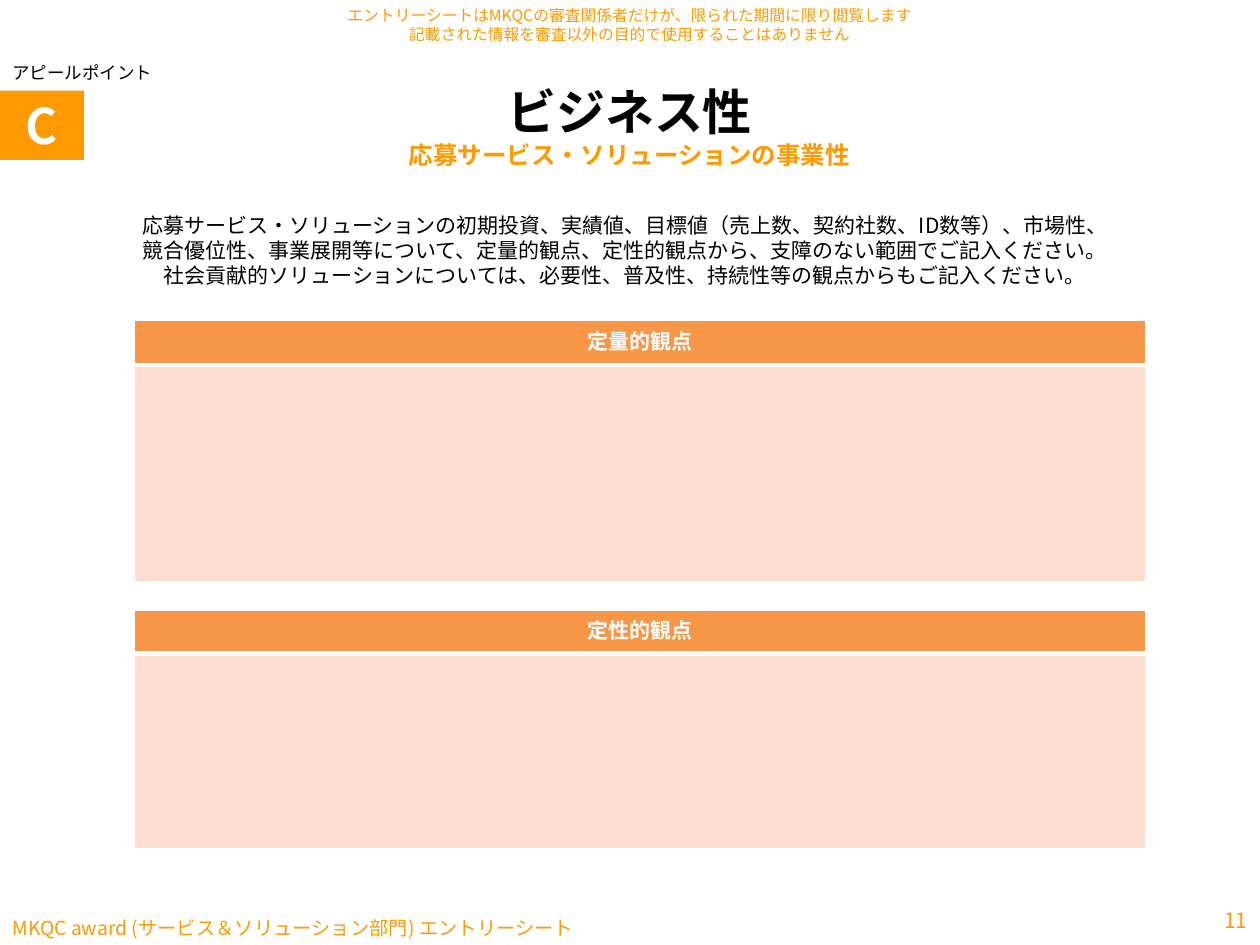
"""Build the business-value page of an award entry sheet."""
from lxml.etree import SubElement
from pptx import Presentation
from pptx.dml.color import RGBColor as RGB
from pptx.enum.shapes import MSO_SHAPE as SHAPE
from pptx.enum.text import MSO_ANCHOR as ANCHOR, MSO_AUTO_SIZE as FIT, PP_ALIGN as ALIGN
from pptx.oxml.ns import qn
from pptx.util import Pt

THEME = {
    "font": "Noto Sans CJK JP",
    "leading": 1.2,
    "color": {"accent": "FF9900", "text": "000000", "white": "FFFFFF",
              "header": "F79646", "body": "FCDDCF"},
    "size": {"hero": 28, "subtitle": 14, "body": 12, "footer": 11, "label": 10, "notice": 9},
}

TITLE = [("ビジネス性", "hero", "text", True),
         ("応募サービス・ソリューションの事業性", "subtitle", "accent", True)]
TITLE_BOX = (19.5, 43.2, 680.5, 57)
BADGE = [("C", "hero", "white", True)]
BADGE_BOX = (0, 51.8, 48, 39.6)

TEXTS = [
    {"box": (0, 520.5, 400, 19.5), "align": ALIGN.LEFT, "anchor": ANCHOR.MIDDLE, "wrap": True,
     "lines": [("MKQC award (サービス＆ソリューション部門) エントリーシート", "footer", "accent", False)]},
    {"box": (274.3, 0, 170.6, 28), "align": ALIGN.CENTER, "anchor": ANCHOR.TOP, "wrap": False,
     "lines": [("エントリーシートはMKQCの審査関係者だけが、限られた期間に限り閲覧します",
                "notice", "accent", False),
               ("記載された情報を審査以外の目的で使用することはありません", "notice", "accent", False)]},
    {"box": (0, 31.7, 110, 19), "align": ALIGN.LEFT, "anchor": ANCHOR.TOP, "wrap": True,
     "lines": [("アピールポイント", "label", "text", False)]},
    {"box": (690.5, 511.2, 29.5, 28.8), "align": ALIGN.RIGHT, "anchor": ANCHOR.MIDDLE, "wrap": True,
     "lines": [("11", "body", "accent", False)]},
    {"box": (70.6, 119.5, 573, 46.8), "align": ALIGN.CENTER, "anchor": ANCHOR.MIDDLE, "wrap": True,
     "lines": [("応募サービス・ソリューションの初期投資、実績値、目標値（売上数、契約社数、ID数等）、市場性、"
                "競合優位性、事業展開等について、定量的観点、定性的観点から、支障のない範囲でご記入ください。",
                "body", "text", False),
               ("社会貢献的ソリューションについては、必要性、普及性、持続性等の観点からもご記入ください。",
                "body", "text", False)]},
]

TABLE_LEFT, TABLE_WIDTH = 76.5, 578
TABLES = [("定量的観点", 183, (25.5, 124)), ("定性的観点", 349, (24.5, 111.5))]


def color(name):
    return RGB.from_string(THEME["color"][name])


def assign(obj, values):
    for name, value in values.items():
        setattr(obj, name, value)


def write(tf, lines, align):
    for i, (text, size, tint, bold) in enumerate(lines):
        p = tf.paragraphs[0] if i == 0 else tf.add_paragraph()
        points = THEME["size"][size]
        assign(p, {"alignment": align, "line_spacing": Pt(points * THEME["leading"]),
                   "space_before": Pt(0), "space_after": Pt(0)})
        r = p.add_run()
        r.text = text
        r.font.color.rgb = color(tint)
        assign(r.font, {"size": Pt(points), "bold": bold, "name": THEME["font"]})
        SubElement(r.font._element, qn("a:ea"), typeface=THEME["font"])


def fill_frame(tf, lines, align=ALIGN.CENTER, anchor=ANCHOR.MIDDLE, wrap=True):
    assign(tf, {"auto_size": FIT.NONE, "word_wrap": wrap, "vertical_anchor": anchor})
    write(tf, lines, align)


def set_borders(cell, bottom):
    pr = cell._tc.get_or_add_tcPr()
    for i, (side, width) in enumerate({"L": 1, "R": 1, "T": 1, "B": bottom}.items()):
        ln = pr.makeelement(qn(f"a:ln{side}"), {"w": str(Pt(width))})
        fill = SubElement(ln, qn("a:solidFill"))
        SubElement(fill, qn("a:srgbClr"), val=THEME["color"]["white"])
        pr.insert(i, ln)


def add_entry_table(slide, heading, top, heights):
    frame = slide.shapes.add_table(2, 1, Pt(TABLE_LEFT), Pt(top), Pt(TABLE_WIDTH), Pt(sum(heights)))
    table = frame.table
    for i, (height, tint, bottom) in enumerate(zip(heights, ("header", "body"), (3, 1))):
        table.rows[i].height = Pt(height)
        cell = table.cell(i, 0)
        cell.fill.solid()
        cell.fill.fore_color.rgb = color(tint)
        set_borders(cell, bottom)
    header = table.cell(0, 0)
    header.vertical_anchor = ANCHOR.MIDDLE
    write(header.text_frame, [(heading, "body", "white", True)], ALIGN.CENTER)


def main():
    prs = Presentation()
    assign(prs, {"slide_width": Pt(720), "slide_height": Pt(540)})
    slide = prs.slides.add_slide(prs.slide_layouts[5])

    title = slide.shapes.title
    assign(title, dict(zip(("left", "top", "width", "height"), map(Pt, TITLE_BOX))))
    fill_frame(title.text_frame, TITLE)

    badge = slide.shapes.add_shape(SHAPE.RECTANGLE, *map(Pt, BADGE_BOX))
    badge.shadow.inherit = False
    badge.fill.solid()
    badge.fill.fore_color.rgb = color("accent")
    badge.line.fill.background()
    fill_frame(badge.text_frame, BADGE)

    for item in TEXTS:
        sp = slide.shapes.add_textbox(*map(Pt, item["box"]))
        fill_frame(sp.text_frame, item["lines"], item["align"], item["anchor"], item["wrap"])
    for entry in TABLES:
        add_entry_table(slide, *entry)
    prs.save("out.pptx")


if __name__ == "__main__":
    main()
